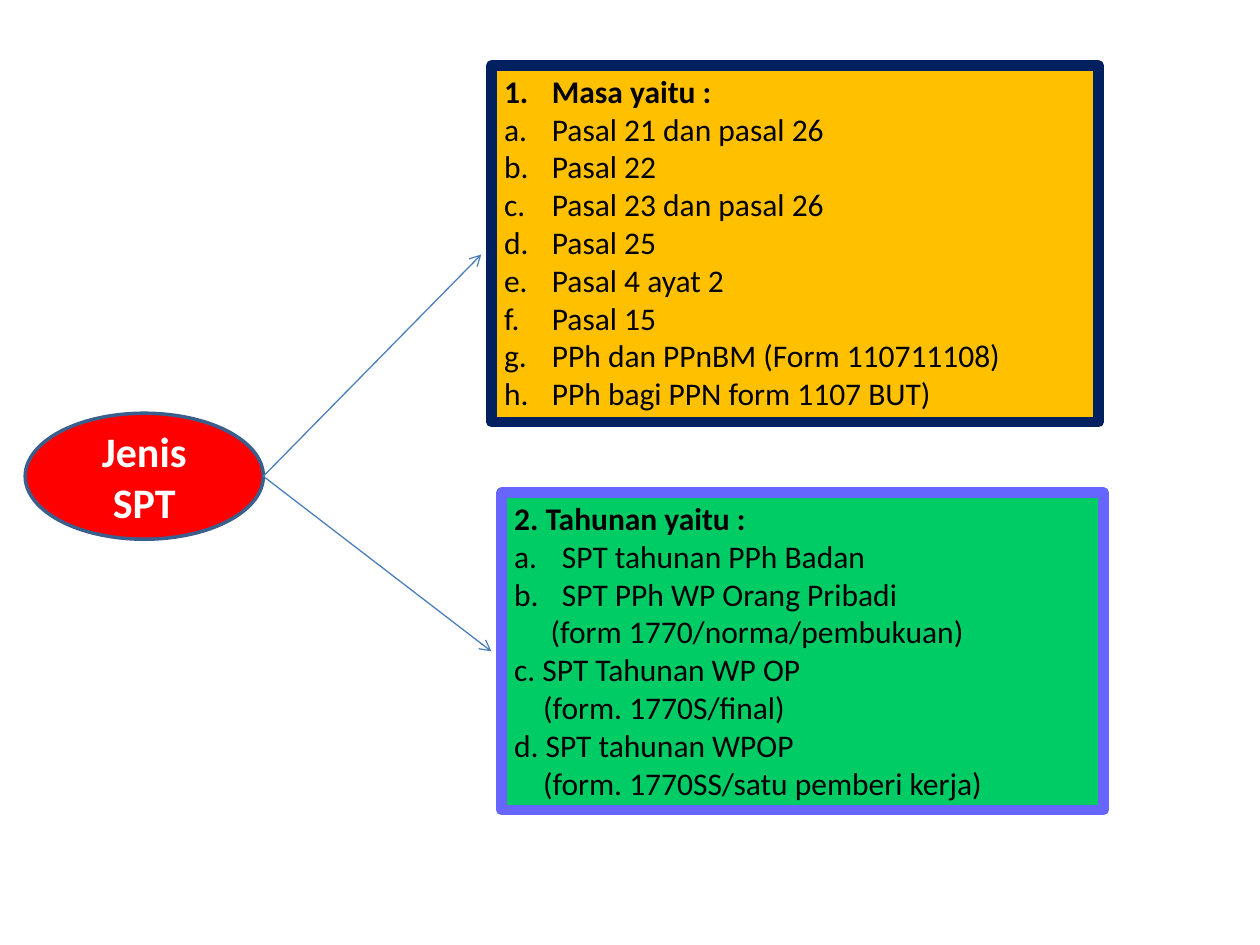
from typing import NamedTuple

from lxml.etree import SubElement as Sub
from pptx import Presentation
from pptx.dml.color import RGBColor as RGB
from pptx.enum.shapes import MSO_CONNECTOR as Link, MSO_SHAPE as Form
from pptx.enum.text import MSO_ANCHOR as Anchor, MSO_AUTO_SIZE as Fit, PP_ALIGN as Align
from pptx.oxml.ns import qn
from pptx.util import Inches, Pt


class Theme:
    font = "Calibri"
    head, body = Pt(24), Pt(18)
    black, white = RGB(0, 0, 0), RGB(255, 255, 255)
    red, rim, arrow = RGB(255, 0, 0), RGB(0x3A, 0x5F, 0x8C), RGB(0x4B, 0x7E, 0xBC)
    gold, navy = RGB(0xFF, 0xC0, 0), RGB(0, 0x20, 0x60)
    green, violet = RGB(0, 0xCC, 0x66), RGB(0x66, 0x66, 0xFF)
    thin, edge, thick = Pt(0.75), Pt(2), Pt(6)


class Box(NamedTuple):
    left: float
    top: float
    width: float
    height: float


class Item(NamedTuple):
    text: str
    mark: str = ""        # numbering scheme, if any
    inset: float = 0      # left indent in columns, for unnumbered lines
    bold: bool = False


class Panel(NamedTuple):
    box: Box
    fill: RGB
    line: RGB
    tip: tuple[float, float]  # where its arrow ends
    items: list[Item]


# Grid: 100 columns by 75 rows on a 10 by 7.5 inch slide
COLS, ROWS = 100, 75
HANG = 3.8
NUM, ABC = "arabicPeriod", "alphaLcPeriod"

deck = Presentation()
deck.slide_width, deck.slide_height = Inches(10), Inches(7.5)


def col(n: float) -> int:
    return round(deck.slide_width * n / COLS)


def row(n: float) -> int:
    return round(deck.slide_height * n / ROWS)


def place(box: Box) -> tuple[int, int, int, int]:
    return col(box.left), row(box.top), col(box.width), row(box.height)


def paint(shape, fill: RGB, line: RGB, width: int) -> None:
    shape.fill.solid()
    shape.fill.fore_color.rgb = fill
    shape.line.color.rgb = line
    shape.line.width = width


def write(para, text: str, size: int, color: RGB, bold: bool) -> None:
    run = para.add_run()
    run.text = text
    font = run.font
    font.name, font.size, font.bold = Theme.font, size, bold
    font.color.rgb = color


def add_item(para, item: Item) -> None:
    para.alignment = Align.LEFT
    para.space_before = Pt(0)
    props = para._p.get_or_add_pPr()
    hang = HANG if item.mark else 0
    props.set("marL", str(col(hang or item.inset)))
    props.set("indent", str(-col(hang)))
    if item.mark:
        Sub(props, qn("a:buFont"), typeface="+mj-lt")
        Sub(props, qn("a:buAutoNum"), type=item.mark)
    else:
        Sub(props, qn("a:buNone"))
    write(para, item.text, Theme.body, Theme.black, item.bold)


def fill_panel(holder, panel: Panel) -> None:
    holder.left, holder.top, holder.width, holder.height = place(panel.box)
    paint(holder, panel.fill, panel.line, Theme.thick)
    frame = holder.text_frame
    frame.word_wrap, frame.auto_size = True, Fit.NONE
    frame.vertical_anchor = Anchor.TOP
    for i, item in enumerate(panel.items):
        add_item(frame.add_paragraph() if i else frame.paragraphs[0], item)


def add_arrow(shapes, start: tuple[float, float], tip: tuple[float, float]) -> None:
    arrow = shapes.add_connector(Link.STRAIGHT, col(start[0]), row(start[1]),
                                 col(tip[0]), row(tip[1]))
    arrow.line.color.rgb = Theme.arrow
    arrow.line.width = Theme.thin
    Sub(arrow.line._get_or_add_ln(), qn("a:tailEnd"), type="arrow")
    Sub(arrow._element.spPr, qn("a:effectLst"))


def add_root(shapes, box: Box, text: str) -> None:
    oval = shapes.add_shape(Form.OVAL, *place(box))
    oval.shadow.inherit = False
    paint(oval, Theme.red, Theme.rim, Theme.edge)
    frame = oval.text_frame
    frame.word_wrap = True
    frame.vertical_anchor = Anchor.MIDDLE
    para = frame.paragraphs[0]
    para.alignment = Align.CENTER
    write(para, text, Theme.head, Theme.white, True)


# Content
ROOT = Box(2, 32.8, 18.9, 10)
MONTHLY = ["Pasal 21 dan pasal 26", "Pasal 22", "Pasal 23 dan pasal 26", "Pasal 25",
           "Pasal 4 ayat 2", "Pasal 15", "PPh dan PPnBM (Form 110711108)",
           "PPh bagi PPN form 1107 BUT)"]
PANELS = [
    Panel(Box(39, 5.2, 48.2, 28.3), Theme.gold, Theme.navy, (38.2, 20.2),
          [Item("Masa yaitu :", NUM, bold=True)] + [Item(t, ABC) for t in MONTHLY]),
    Panel(Box(39.8, 39.1, 47.8, 25.2), Theme.green, Theme.violet, (39, 51.7), [
        Item("2. Tahunan yaitu :", bold=True),
        Item("SPT tahunan PPh Badan", ABC),
        Item("SPT PPh WP Orang Pribadi", ABC),
        Item("(form 1770/norma/pembukuan)", inset=2.9),
        Item("c. SPT Tahunan WP OP"),
        Item("(form. 1770S/final)", inset=2.3),
        Item("d. SPT tahunan WPOP"),
        Item("(form. 1770SS/satu pemberi kerja)", inset=2.3),
    ]),
]

# Slide: two-content layout, with its empty title removed
slide = deck.slides.add_slide(deck.slide_layouts[3])
title, *holders = slide.placeholders
title._element.getparent().remove(title._element)

add_root(slide.shapes, ROOT, "Jenis SPT")
start = (ROOT.left + ROOT.width, ROOT.top + ROOT.height / 2)
for holder, panel in zip(holders, PANELS):
    fill_panel(holder, panel)
    add_arrow(slide.shapes, start, panel.tip)

deck.save("out.pptx")
